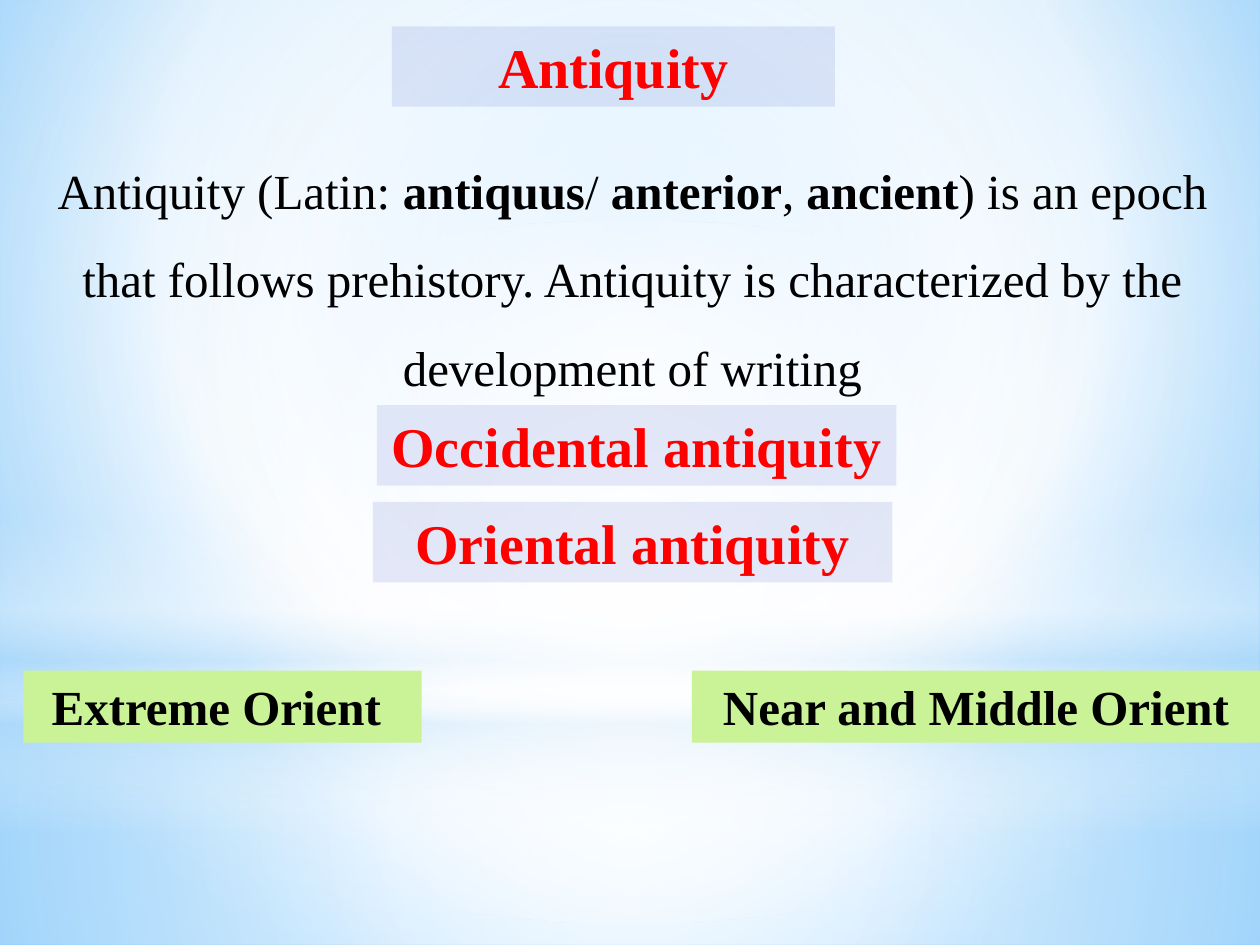
from dataclasses import dataclass

from lxml.etree import SubElement
from pptx import Presentation
from pptx.dml.color import RGBColor
from pptx.enum.shapes import MSO_SHAPE as Shape
from pptx.enum.text import MSO_ANCHOR as Anchor, MSO_AUTO_SIZE as AutoSize, PP_ALIGN as Align
from pptx.oxml.ns import qn
from pptx.util import Cm, Pt


@dataclass(frozen=True)
class Theme:
    font: str = "Times New Roman"
    heading_size: int = 32
    text_size: int = 28
    heading: str = "FF0000"
    text: str = "000000"
    heading_fill: str = "4E67C8"
    heading_opacity: int = 14
    region_fill: str = "CAF297"
    sky: str = "9ED5FF"
    deep_sky: str = "5BB9FF"
    haze: str = "B4DCFA"
    white: str = "FFFFFF"


THEME = Theme()
SLIDE_WIDTH, SLIDE_HEIGHT = 25.4, 19.05
HORIZON = 14.17
CENTRE = (50, 50, 50, 50)


def set_opacity(colour, percent):
    SubElement(colour, qn("a:alpha")).set("val", str(percent * 1000))


def paint_gradient(fill, owner, stops, focus=None):
    """Fill with (position, colour, opacity) stops: round a focus, or else top to bottom."""
    fill.solid()
    solid = owner.find(qn("a:solidFill"))
    gradient = solid.makeelement(qn("a:gradFill"), {"rotWithShape": "1"})
    stop_list = SubElement(gradient, qn("a:gsLst"))
    for position, colour, opacity in stops:
        stop = SubElement(stop_list, qn("a:gs"), pos=str(position * 1000))
        set_opacity(SubElement(stop, qn("a:srgbClr"), val=colour), opacity)
    if focus:
        circle = SubElement(gradient, qn("a:path"), path="circle")
        target = SubElement(circle, qn("a:fillToRect"))
        for side, percent in zip("ltrb", focus):
            target.set(side, str(percent * 1000))
    else:
        SubElement(gradient, qn("a:lin"), ang="5400000", scaled="0")
    owner.replace(solid, gradient)


def add_plain_shape(slide, kind, left, top, width, height):
    shape = slide.shapes.add_shape(kind, Cm(left), Cm(top), Cm(width), Cm(height))
    shape.shadow.inherit = False
    shape.line.fill.background()
    return shape


def add_backdrop(slide):
    background = slide.background.fill
    background.solid()
    paint_gradient(
        background, next(slide.element.iter(qn("p:bgPr"))),
        [(0, THEME.sky, 100), (60, THEME.white, 100), (100, THEME.deep_sky, 100)],
        (20, 10, 20, 60))
    white, haze = THEME.white, THEME.haze
    layers = [
        (Shape.RECTANGLE, HORIZON, SLIDE_HEIGHT - HORIZON, CENTRE,
         [(0, white, 91), (37, white, 76), (100, haze, 79)]),
        (Shape.RECTANGLE, 0, HORIZON, CENTRE,
         [(0, white, 89), (48, white, 62), (100, haze, 79)]),
        (Shape.RECTANGLE, 10.46, 6.35, None,
         [(0, white, 0), (29, white, 30), (45, haze, 40),
          (55, white, 26), (65, haze, 60), (100, white, 0)]),
        (Shape.OVAL, 4.45, HORIZON, CENTRE, [(0, white, 100), (56, white, 0)]),
    ]
    for kind, top, height, focus, stops in layers:
        layer = add_plain_shape(slide, kind, 0, top, SLIDE_WIDTH, height)
        paint_gradient(layer.fill, layer.element.spPr, stops, focus)


def style_text(frame, size, colour, bold):
    frame.word_wrap = True
    frame.auto_size = AutoSize.NONE
    frame.vertical_anchor = Anchor.TOP
    paragraph = frame.paragraphs[0]
    paragraph.alignment = Align.CENTER
    for run in paragraph.runs:
        run.font.name = THEME.font
        run.font.size = Pt(size)
        run.font.color.rgb = RGBColor.from_string(colour)
        run.font.bold = bold


def style_heading(shape, text):
    shape.fill.solid()
    shape.fill.fore_color.rgb = RGBColor.from_string(THEME.heading_fill)
    set_opacity(next(shape.element.spPr.iter(qn("a:srgbClr"))), THEME.heading_opacity)
    shape.text_frame.text = text
    style_text(shape.text_frame, THEME.heading_size, THEME.heading, True)


def add_title(slide, text):
    title = slide.shapes.title
    title.element.getparent().append(title.element)  # in front of the backdrop
    title.left, title.top, title.width, title.height = Cm(7.9), Cm(0.53), Cm(8.93), Cm(1.62)
    style_heading(title, text)


def add_heading(slide, text, left, top):
    style_heading(add_plain_shape(slide, Shape.RECTANGLE, left, top, 10.47, 1.62), text)


def add_region(slide, text, left, width):
    region = add_plain_shape(slide, Shape.RECTANGLE, left, 13.52, width, 1.45)
    region.fill.solid()
    region.fill.fore_color.rgb = RGBColor.from_string(THEME.region_fill)
    region.text_frame.text = text
    style_text(region.text_frame, THEME.text_size, THEME.text, True)


def add_definition(slide, parts):
    """Add the definition; every second part is a bold term."""
    definition = slide.shapes.add_textbox(Cm(0.5), Cm(2.52), Cm(24.5), Cm(5.64))
    paragraph = definition.text_frame.paragraphs[0]
    paragraph.line_spacing = 1.5
    for part in parts:
        paragraph.add_run().text = part
    style_text(definition.text_frame, THEME.text_size, THEME.text, False)
    for term in paragraph.runs[1::2]:
        term.font.bold = True


def main():
    deck = Presentation()
    deck.slide_width, deck.slide_height = Cm(SLIDE_WIDTH), Cm(SLIDE_HEIGHT)
    slide = deck.slides.add_slide(deck.slide_layouts[5])
    add_backdrop(slide)
    add_title(slide, "Antiquity")
    add_definition(slide, [
        "Antiquity (Latin: ", "antiquus", "/ ", "anterior", ", ", "ancient",
        ") is an epoch that follows prehistory. "
        "Antiquity is characterized by the development of writing"])
    add_heading(slide, "Occidental antiquity", 7.6, 8.17)
    add_heading(slide, "Oriental antiquity", 7.52, 10.12)
    add_region(slide, "Extreme Orient ", 0.47, 8.03)
    add_region(slide, "Near and Middle Orient", 13.95, 11.45)
    deck.save("out.pptx")


if __name__ == "__main__":
    main()
